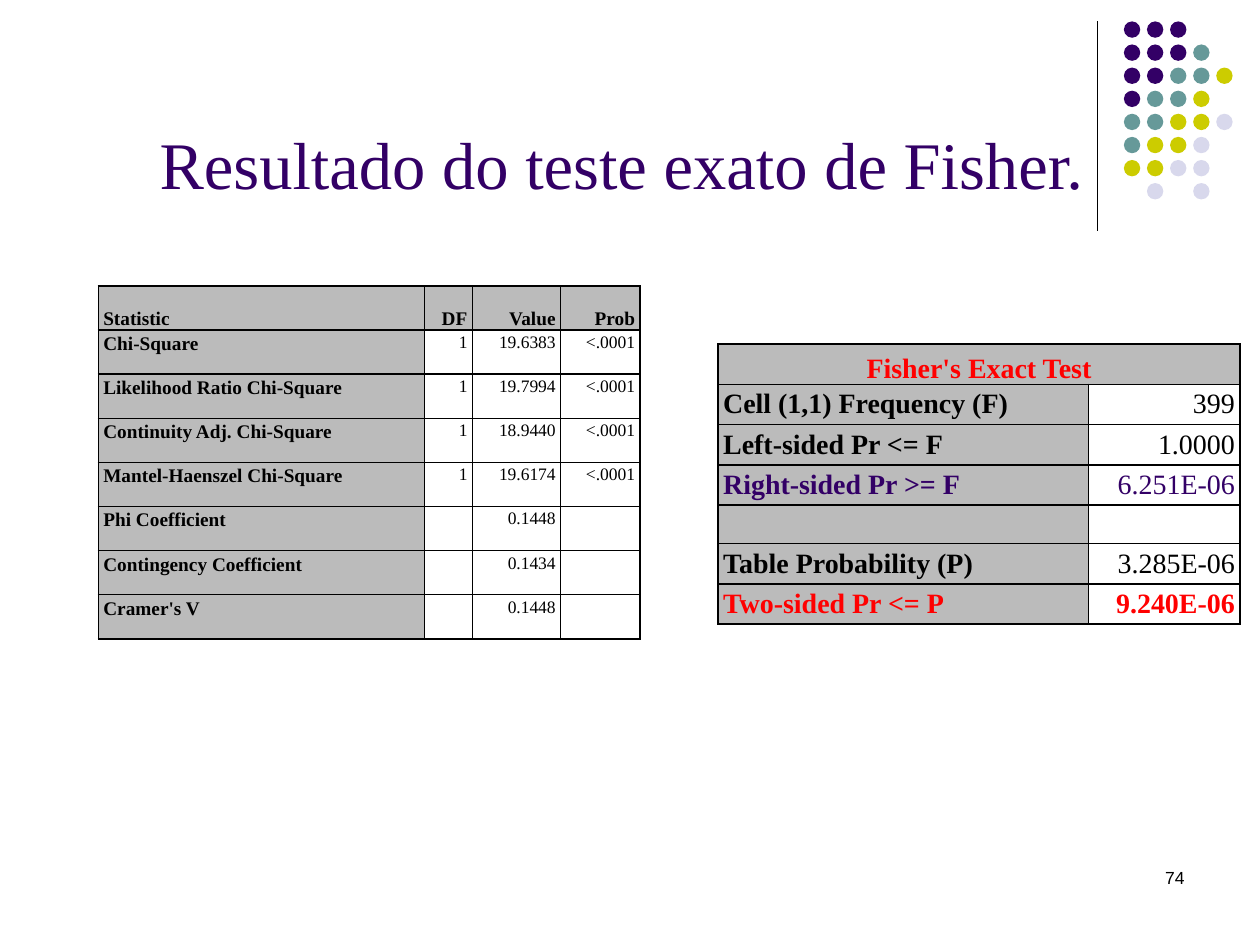
from lxml.etree import SubElement
from pptx import Presentation
from pptx.dml.color import RGBColor
from pptx.enum.shapes import MSO_CONNECTOR as Connector, MSO_SHAPE as Shape
from pptx.enum.text import MSO_ANCHOR as Anchor, MSO_AUTO_SIZE as AutoSize, PP_ALIGN as Align
from pptx.oxml.ns import qn
from pptx.util import Inches, Pt

BLACK = RGBColor(0x00, 0x00, 0x00)
WHITE = RGBColor(0xFF, 0xFF, 0xFF)
GRAY = RGBColor(0xBB, 0xBB, 0xBB)
RED = RGBColor(0xFF, 0x00, 0x00)
PURPLE = RGBColor(0x33, 0x00, 0x66)
TEAL = RGBColor(0x66, 0x99, 0x99)
OLIVE = RGBColor(0xCC, 0xCC, 0x00)
LAVENDER = RGBColor(0xD8, 0xD8, 0xEC)

DOT_COLORS = {"P": PURPLE, "T": TEAL, "O": OLIVE, "L": LAVENDER}
DOT_ROWS = ["PPP", "PPPT", "PPTTO", "PTTO", "TTOOL", "TOOL", "OOLL", " L L"]
DOT_SIZE = 0.13
DOT_PITCH = 0.55 / 3

STATISTICS = [
    ["Statistic", "DF", "Value", "Prob"],
    ["Chi-Square", "1", "19.6383", "<.0001"],
    ["Likelihood Ratio Chi-Square", "1", "19.7994", "<.0001"],
    ["Continuity Adj. Chi-Square", "1", "18.9440", "<.0001"],
    ["Mantel-Haenszel Chi-Square", "1", "19.6174", "<.0001"],
    ["Phi Coefficient", "", "0.1448", ""],
    ["Contingency Coefficient", "", "0.1434", ""],
    ["Cramer's V", "", "0.1448", ""],
]
FISHER = [
    ["Fisher's Exact Test", ""],
    ["Cell (1,1) Frequency (F)", "399"],
    ["Left-sided Pr <= F", "1.0000"],
    ["Right-sided Pr >= F", "6.251E-06"],
    ["", ""],
    ["Table Probability (P)", "3.285E-06"],
    ["Two-sided Pr <= P", "9.240E-06"],
]
FISHER_COLORS = {0: RED, 3: PURPLE, 6: RED}


class SlideBuilder:
    font = "Times New Roman"

    def __init__(self, page):
        self.page = page

    def add_text(self, frame, text, size, color=BLACK, bold=False, align=Align.LEFT, font=None):
        para = frame.paragraphs[0]
        para.alignment = align
        if text:
            span = para.add_run()
            span.text = text
            span.font.name = font or self.font
            span.font.size = Pt(size)
            span.font.bold = bold
            span.font.color.rgb = color
        return para

    def title(self, text, left, top, width, height):
        box = self.page.shapes.title
        box.left, box.top, box.width, box.height = map(Inches, (left, top, width, height))
        frame = box.text_frame
        frame.auto_size = AutoSize.NONE
        frame.vertical_anchor = Anchor.BOTTOM
        self.add_text(frame, text, 38, PURPLE, align=Align.CENTER)

    def page_number(self, text, left, top, width, height):
        box = self.page.shapes.add_textbox(*map(Inches, (left, top, width, height)))
        box.text_frame.word_wrap = True
        self.add_text(box.text_frame, text, 10, align=Align.RIGHT, font="Arial")

    def rule(self, x, top, bottom):
        line = self.page.shapes.add_connector(
            Connector.STRAIGHT, Inches(x), Inches(top), Inches(x), Inches(bottom))
        line.line.color.rgb = BLACK
        line.line.width = Pt(0.75)
        SubElement(line._element.spPr, qn("a:effectLst"))

    def dots(self, left, top):
        group = self.page.shapes.add_group_shape()
        for row, codes in enumerate(DOT_ROWS):
            for column, code in enumerate(codes):
                if code == " ":
                    continue
                dot = group.shapes.add_shape(
                    Shape.OVAL, Inches(left + column * DOT_PITCH), Inches(top + row * DOT_PITCH),
                    Inches(DOT_SIZE), Inches(DOT_SIZE))
                dot.shadow.inherit = False
                dot.fill.solid()
                dot.fill.fore_color.rgb = DOT_COLORS[code]
                dot.line.fill.background()

    def borders(self, cell):
        properties = cell._tc.get_or_add_tcPr()
        for side in ("lnL", "lnR", "lnT", "lnB"):
            edge = SubElement(properties, qn(f"a:{side}"), w=str(Pt(1)))
            SubElement(SubElement(edge, qn("a:solidFill")), qn("a:srgbClr"), val=str(BLACK))

    def table(self, rows, left, top, widths, heights, label_size, value_size,
              colors=None, bold_rows=(), title_row=False):
        """Draw a grid whose first row and first column are gray and bold."""
        table = self.page.shapes.add_table(
            len(rows), len(widths), Inches(left), Inches(top),
            Inches(sum(widths)), Inches(sum(heights))).table
        table.first_row = table.horz_banding = False
        for column, width in zip(table.columns, widths):
            column.width = Inches(width)
        for line, height in zip(table.rows, heights):
            line.height = Inches(height)
        for r, texts in enumerate(rows):
            for c, text in enumerate(texts):
                cell = table.cell(r, c)
                is_label = r == 0 or c == 0
                self.borders(cell)
                cell.fill.solid()
                cell.fill.fore_color.rgb = GRAY if is_label else WHITE
                cell.margin_left = cell.margin_right = Inches(0.04)
                cell.margin_top = cell.margin_bottom = 0
                cell.vertical_anchor = Anchor.BOTTOM if r == 0 else Anchor.TOP
                para = self.add_text(
                    cell.text_frame, text, label_size if is_label else value_size,
                    (colors or {}).get(r, BLACK), is_label or r in bold_rows,
                    Align.RIGHT if c else Align.LEFT)
                if text:
                    para.line_spacing = 1.15
                    para.space_before = para.space_after = Pt(3)
        if title_row:
            table.cell(0, 0).merge(table.cell(0, len(widths) - 1))
            table.cell(0, 0).text_frame.paragraphs[0].alignment = Align.CENTER


def main():
    deck = Presentation()
    deck.slide_width, deck.slide_height = Inches(10), Inches(7.5)
    builder = SlideBuilder(deck.slides.add_slide(deck.slide_layouts[5]))
    builder.rule(8.71, 0.17, 1.83)
    builder.dots(8.92, 0.17)
    builder.title("Resultado do teste exato de Fisher.", 1.02, 0.11, 7.83, 1.55)
    builder.table(STATISTICS, 0.78, 2.27, [2.59, 0.38, 0.7, 0.63],
                  [0.35] * len(STATISTICS), 11, 10)
    builder.table(FISHER, 5.7, 2.73, [2.94, 1.2],
                  [0.32 if row[0] else 0.29 for row in FISHER], 16, 16,
                  FISHER_COLORS, bold_rows=(6,), title_row=True)
    builder.page_number("74", 7.17, 6.83, 2.33, 0.5)
    deck.save("out.pptx")


if __name__ == "__main__":
    main()
